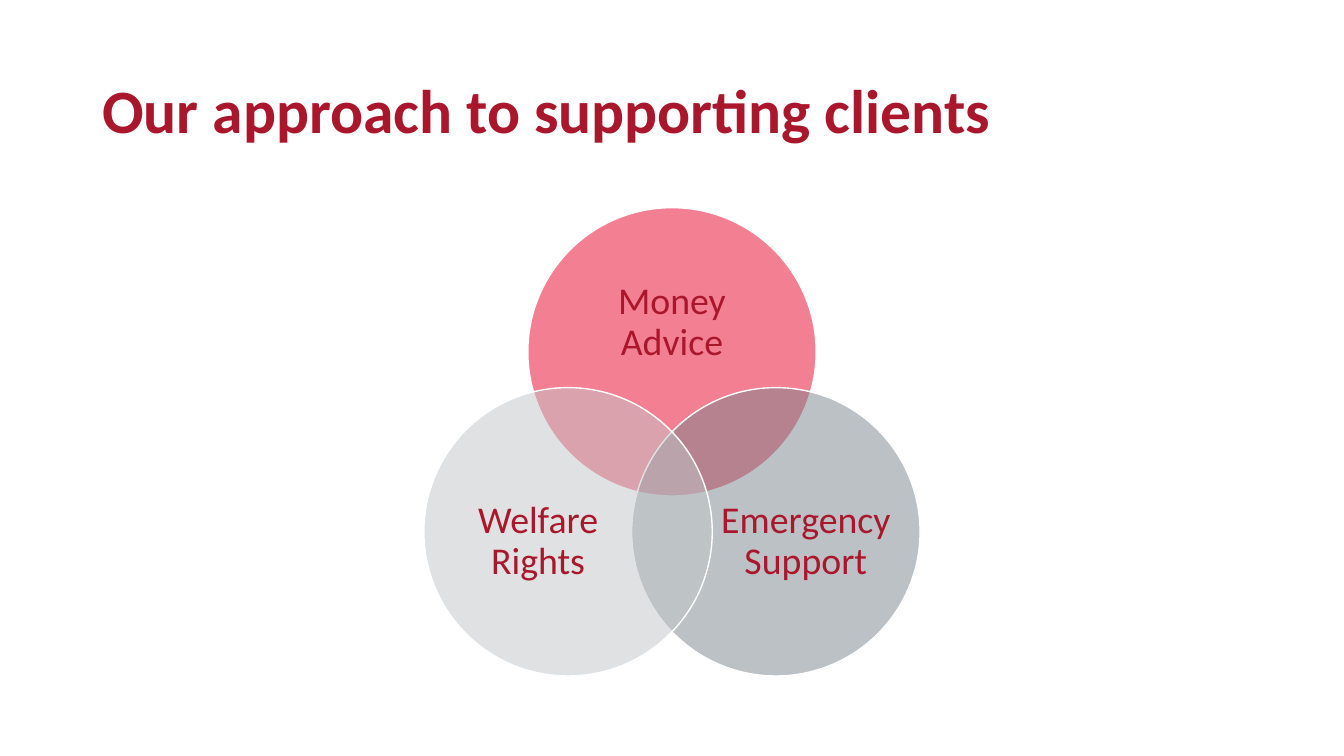
from dataclasses import dataclass
from math import cos, radians, sin

from lxml.etree import SubElement
from pptx import Presentation
from pptx.dml.color import RGBColor
from pptx.enum.shapes import MSO_SHAPE as Preset
from pptx.enum.text import MSO_ANCHOR as Anchor, PP_ALIGN as Align
from pptx.oxml.ns import qn
from pptx.slide import Slide
from pptx.util import Pt


@dataclass(frozen=True)
class Theme:
    font: str = "Calibri"
    text: str = "AA172C"
    outline: str = "FFFFFF"
    money: str = "E90029"
    emergency: str = "7B858C"
    welfare: str = "C1C5C8"
    title_size: float = 44
    label_size: float = 27
    opacity: int = 50


@dataclass(frozen=True)
class Service:
    label: str
    color: str
    angle: float  # degrees clockwise from the right
    label_shift: tuple[float, float]  # from the circle's centre
    label_size: tuple[float, float]


@dataclass(frozen=True)
class Box:
    left: float
    top: float
    width: float
    height: float

    @classmethod
    def around(cls, x: float, y: float, width: float, height: float) -> "Box":
        return cls(x - width / 2, y - height / 2, width, height)

    def lengths(self) -> tuple[Pt, Pt, Pt, Pt]:
        return Pt(self.left), Pt(self.top), Pt(self.width), Pt(self.height)


THEME = Theme()
VENN_X, VENN_Y = 480, 337
ORBIT = 85.7
DIAMETER = 206
SIDE_LABEL = (123.2, 113)
SERVICES = [
    Service("Money Advice", THEME.money, -90, (0, -20.9), (150.6, 92)),
    Service("Emergency Support", THEME.emergency, 30, (21.4, 6.9), SIDE_LABEL),
    Service("Welfare Rights", THEME.welfare, 150, (-21.4, 6.9), SIDE_LABEL),
]


def add_text(slide: Slide, box: Box, text: str, size: float, align: Align,
             bold: bool = False, margins: tuple[float, float] = (0, 0)) -> None:
    frame = slide.shapes.add_textbox(*box.lengths()).text_frame
    side, end = Pt(margins[0]), Pt(margins[1])
    frame_format = {
        "word_wrap": True, "vertical_anchor": Anchor.MIDDLE,
        "margin_left": side, "margin_right": side,
        "margin_top": end, "margin_bottom": end,
    }
    for name, value in frame_format.items():
        setattr(frame, name, value)
    paragraph = frame.paragraphs[0]
    paragraph.text = text
    paragraph.alignment = align
    paragraph.line_spacing = 0.9
    font_format = {"name": THEME.font, "size": Pt(size), "bold": bold}
    for name, value in font_format.items():
        setattr(paragraph.font, name, value)
    paragraph.font.color.rgb = RGBColor.from_string(THEME.text)


def add_circle(slide: Slide, box: Box, color: str) -> None:
    circle = slide.shapes.add_shape(Preset.OVAL, *box.lengths())
    circle.shadow.inherit = False
    circle.fill.solid()
    circle.fill.fore_color.rgb = RGBColor.from_string(color)
    fill_color = circle.fill._xPr.find(qn("a:solidFill"))[0]
    SubElement(fill_color, qn("a:alpha"), val=str(THEME.opacity * 1000))
    circle.line.color.rgb = RGBColor.from_string(THEME.outline)
    circle.line.width = Pt(1)


def add_service(slide: Slide, service: Service) -> None:
    x = VENN_X + ORBIT * cos(radians(service.angle))
    y = VENN_Y + ORBIT * sin(radians(service.angle))
    add_circle(slide, Box.around(x, y, DIAMETER, DIAMETER), service.color)
    shift_x, shift_y = service.label_shift
    label_box = Box.around(x + shift_x, y + shift_y, *service.label_size)
    add_text(slide, label_box, service.label, THEME.label_size, Align.CENTER)


def main() -> None:
    deck = Presentation()
    deck.slide_width, deck.slide_height = Pt(960), Pt(540)
    slide = deck.slides.add_slide(deck.slide_layouts[6])
    add_text(slide, Box(66, 28.75, 828, 104.4), "Our approach to supporting clients",
             THEME.title_size, Align.LEFT, bold=True, margins=(7.2, 3.6))
    for service in SERVICES:
        add_service(slide, service)
    deck.save("out.pptx")


if __name__ == "__main__":
    main()
